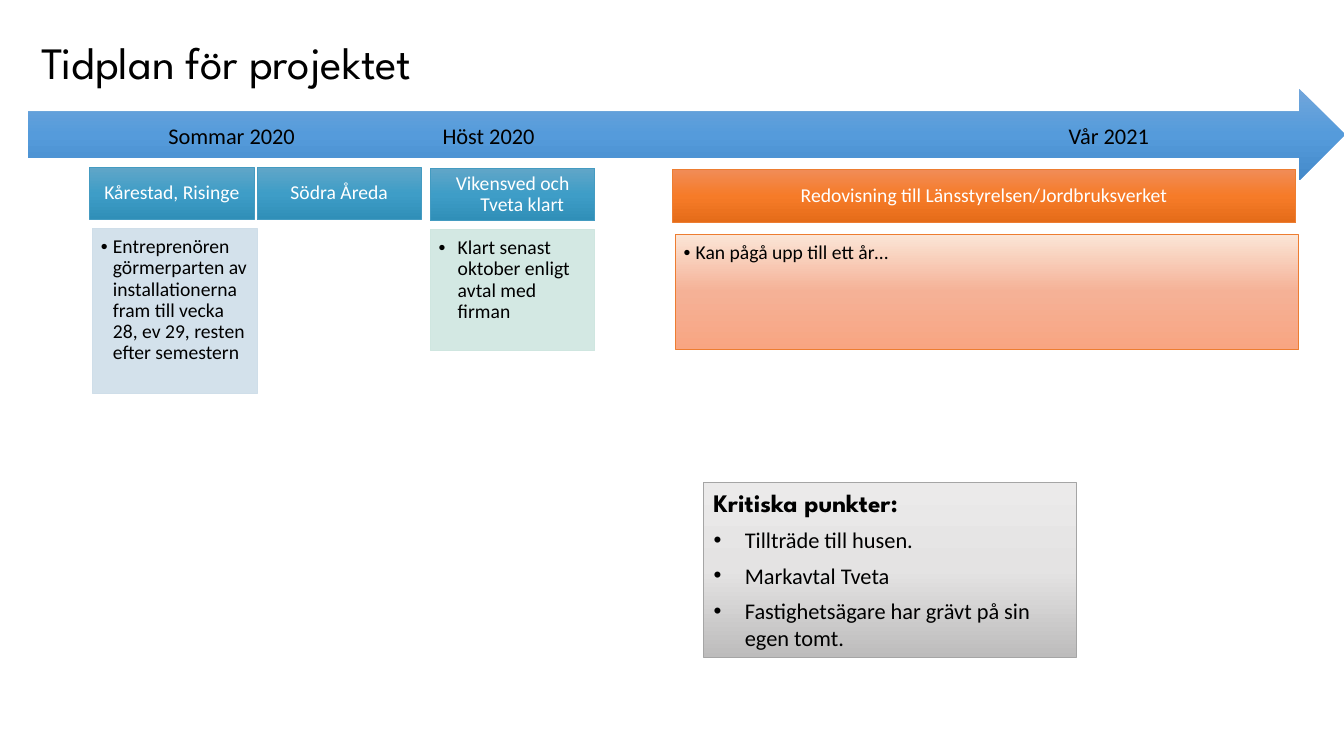
from lxml.etree import SubElement
from pptx import Presentation
from pptx.dml.color import RGBColor
from pptx.enum.shapes import MSO_SHAPE
from pptx.enum.text import MSO_ANCHOR, MSO_AUTO_SIZE, PP_ALIGN
from pptx.oxml.ns import qn
from pptx.util import Inches, Pt

TITLE = "Tidplan för projektet"
PERIODS = [("Sommar 2020", 1.36), ("Höst 2020", 4.08), ("Vår 2021", 10.29)]
# style, (left, top, width, height), hanging indent, text
CARDS = [
    ("place", (0.89, 1.66, 1.63, 0.52), 0.19, "Kårestad, Risinge"),
    ("place", (2.55, 1.66, 1.63, 0.52), 0.19, "Södra Åreda"),
    ("place", (4.27, 1.67, 1.63, 0.52), 0.19, "Vikensved och Tveta klart"),
    ("report", (6.67, 1.68, 6.18, 0.53), 0,
     "Redovisning till Länsstyrelsen/Jordbruksverket"),
    ("summer", (0.92, 2.27, 1.63, 1.63), 0.12,
     "Entreprenören görmerparten av installationerna fram till vecka 28, "
     "ev 29, resten efter semestern"),
    ("autumn", (4.27, 2.28, 1.63, 1.2), 0.19,
     "Klart senast oktober enligt avtal med firman"),
    ("spring", (6.7, 2.33, 6.18, 1.14), 0.12, "Kan pågå upp till ett år…"),
]
RISKS = ["Kritiska punkter:", "Tillträde till husen.", "Markavtal Tveta",
         "Fastighetsägare har grävt på sin egen tomt."]

THEME = {
    "head": "League Spartan", "body": "Calibri",
    "dark": "000000", "light": "FFFFFF",
    "title": 32, "label": 16, "card": 14, "risk": 18,
    # fill stops, line
    "place": (["61A6C8", "3E9DC7", "308FB8"], "449BC1"),
    "report": (["F18C57", "F67B28", "E56C19"], "ED7D31"),
    "summer": (["CFDEE9"], "CFDEE9"),
    "autumn": (["CFE6E0"], "CFE6E0"),
    "spring": (["FBE5D6", "F5B196", "F8A582"], "ED7D31"),
    "arrow": (["71A6DB", "559BDB", "448ACA"], None),
    "risks": (["EBEAEA", "E4E3E3", "BDBCBC"], "A5A5A5"),
}
HEADS = ("place", "report")


def apply(target, values):
    for name, value in values.items():
        setattr(target, name, value)


def tint(shape, stops):
    """Fill with one nearly opaque colour, or with a top-down gradient."""
    if len(stops) == 1:
        shape.fill.solid()
        shape.fill.fore_color.rgb = RGBColor.from_string(stops[0])
        tone = shape.fill._xPr.find(".//" + qn("a:srgbClr"))
        SubElement(tone, qn("a:alpha"), val="90000")
        return
    shape.fill.gradient()
    shape.fill.gradient_angle = 270
    group = shape.fill._xPr.find(".//" + qn("a:gsLst"))
    for old in list(group):
        group.remove(old)
    for i, tone in enumerate(stops):
        stop = SubElement(group, qn("a:gs"), pos=str(i * 50000))
        SubElement(stop, qn("a:srgbClr"), val=tone)


def draw(slide, kind, box, form=MSO_SHAPE.RECTANGLE):
    shape = slide.shapes.add_shape(form, *map(Inches, box))
    shape.shadow.inherit = False
    stops, edge = THEME[kind]
    tint(shape, stops)
    if edge:
        shape.line.color.rgb = RGBColor.from_string(edge)
        shape.line.width = Pt(0.5)
    else:
        shape.line.fill.background()
    return shape


def setup(frame, anchor, inset=(0.1, 0.05, 0.1, 0.05)):
    sides = ("margin_left", "margin_top", "margin_right", "margin_bottom")
    apply(frame, {"word_wrap": True, "auto_size": MSO_AUTO_SIZE.NONE,
                  "vertical_anchor": anchor,
                  **dict(zip(sides, map(Inches, inset)))})


def write(para, text, size, face="body", tone="dark", bold=False, **form):
    run = para.add_run()
    run.text = text
    apply(run.font, {"name": THEME[face], "size": Pt(THEME[size]),
                     "bold": bold})
    run.font.color.rgb = RGBColor.from_string(THEME[tone])
    apply(para, {"alignment": PP_ALIGN.LEFT, **form})


def hang(para, indent, bullet):
    props = para._p.get_or_add_pPr()
    props.set("marL", str(Inches(indent)))
    props.set("indent", str(-Inches(indent)))
    if bullet:
        SubElement(props, qn("a:buFont"), typeface="Arial")
        SubElement(props, qn("a:buChar"), char="•")


def add_title(slide):
    title = slide.shapes.title
    apply(title, dict(zip(("left", "top", "width", "height"),
                          map(Inches, (0.31, 0.33, 11.43, 0.61)))))
    setup(title.text_frame, MSO_ANCHOR.BOTTOM)
    write(title.text_frame.paragraphs[0], TITLE, "title", "head",
          line_spacing=0.9)


def add_axis(slide):
    draw(slide, "arrow", (0.28, 0.88, 13.06, 0.91), MSO_SHAPE.RIGHT_ARROW)
    box = slide.shapes.add_textbox(*map(Inches, (0.31, 1.02, 12.57, 0.68)))
    setup(box.text_frame, MSO_ANCHOR.MIDDLE, (0, 0.16, 0, 0.16))
    para = box.text_frame.paragraphs[0]
    write(para, "".join("\t" + name for name, _ in PERIODS), "label",
          line_spacing=0.9)
    tabs = SubElement(para._p.get_or_add_pPr(), qn("a:tabLst"))
    for _, left in PERIODS:
        SubElement(tabs, qn("a:tab"), pos=str(Inches(left)), algn="l")


def add_card(slide, kind, box, indent, text):
    frame = draw(slide, kind, box).text_frame
    para = frame.paragraphs[0]
    head = kind in HEADS
    if head:
        setup(frame, MSO_ANCHOR.MIDDLE, (0.1, 0.06, 0.1, 0.06))
        write(para, text, "card", tone="light", line_spacing=0.9,
              alignment=PP_ALIGN.CENTER)
    else:
        setup(frame, MSO_ANCHOR.TOP, (0.08, 0.08, 0.1, 0.11))
        write(para, text, "card", line_spacing=0.9)
    hang(para, indent, not head)


def add_risks(slide):
    frame = draw(slide, "risks", (6.98, 4.79, 3.7, 1.73)).text_frame
    setup(frame, MSO_ANCHOR.TOP)
    write(frame.paragraphs[0], RISKS[0], "risk", "head", bold=True)
    for text in RISKS[1:]:
        para = frame.add_paragraph()
        write(para, text, "label", space_before=Pt(6))
        hang(para, 0.31, True)


def main():
    deck = Presentation()
    apply(deck, {"slide_width": Inches(13.33), "slide_height": Inches(7.5)})
    slide = deck.slides.add_slide(deck.slide_layouts[5])
    add_title(slide)
    add_axis(slide)
    for card in CARDS:
        add_card(slide, *card)
    add_risks(slide)
    deck.save("out.pptx")


if __name__ == "__main__":
    main()
